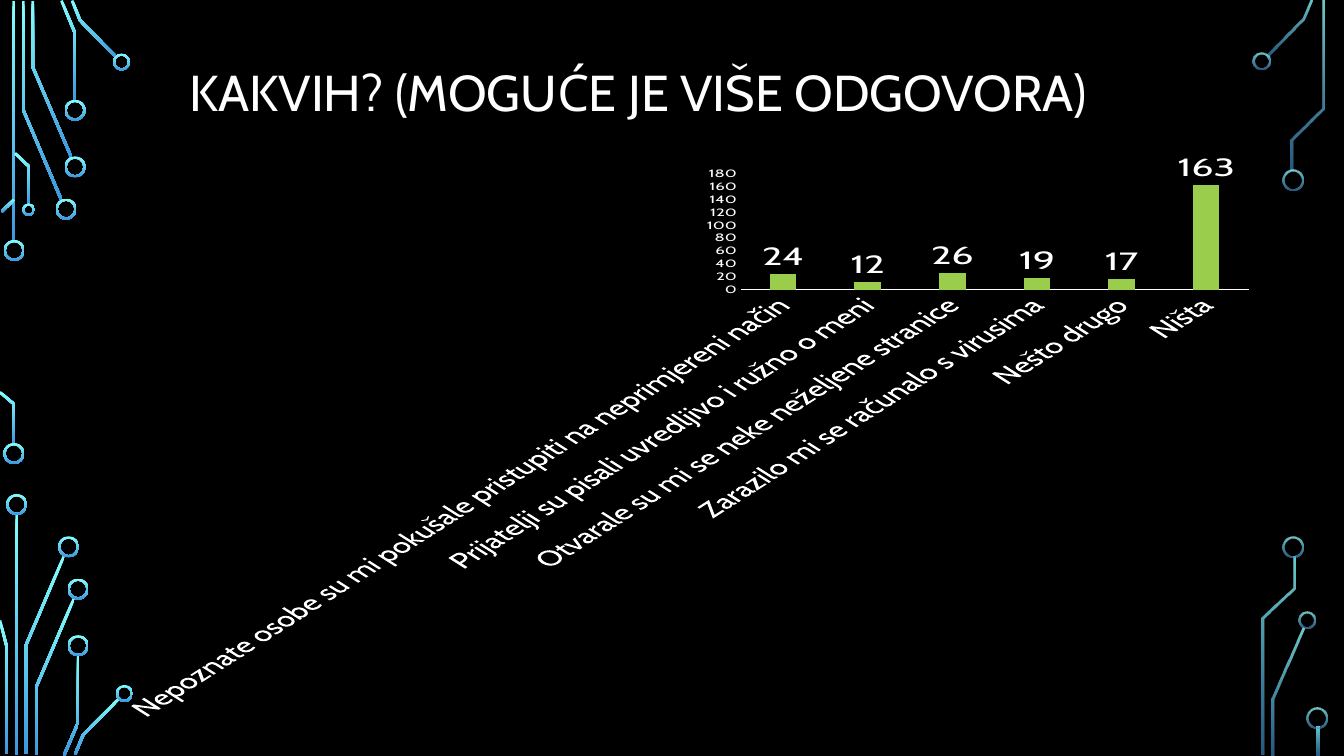
from math import hypot
from lxml.etree import SubElement
from pptx import Presentation
from pptx.chart.data import CategoryChartData as ChartData
from pptx.dml.color import RGBColor as RGB
from pptx.enum.chart import XL_CHART_TYPE as ChartType, XL_LABEL_POSITION as LabelPos, XL_TICK_MARK as Tick
from pptx.enum.shapes import MSO_SHAPE as Shape
from pptx.enum.text import MSO_ANCHOR as Anchor, PP_ALIGN as Align
from pptx.oxml.ns import qn
from pptx.util import Pt

TITLE = "KAKVIH? (MOGUĆE JE VIŠE ODGOVORA)"
ANSWERS = {
    "Nepoznate osobe su mi pokušale pristupiti na neprimjereni način": 24,
    "Prijatelji su pisali uvredljivo i ružno o meni": 12,
    "Otvarale su mi se neke neželjene stranice": 26,
    "Zarazilo mi se računalo s virusima": 19,
    "Nešto drugo": 17,
    "Ništa": 163,
}

THEME = {
    "font": "Cabin", "back": "000000", "text": "FFFFFF", "bar": "9ACD4C",
    "glow": ("82FFFF", "3D97DE"),
    "title": 36, "chart": 10, "values": 12, "categories": 24, "labels": 28,
}
TITLE_BOX = (128.2, 9.4, 779.8, 116.6)
CHART_BOX = (72, 108.7, 836.6, 406.8)
TRACE_WIDTH = 1.9
RING_WIDTH = 1.5
BIG, MEDIUM, SMALL = 15, 12.2, 9

# Circuit traces are centre lines; rings are (centre x, centre y, diameter).
LEFT_CIRCUIT = {
    "opacity": (100, 100),
    "traces": [
        [(9.7, 0.7), (9.7, 172.8)],
        [(16.6, 0.7), (16.6, 78.5), (43.9, 142.9)],
        [(23.4, 0.7), (23.4, 47.9), (51.1, 112.7)],
        [(43.9, 0.4), (53.6, 23.8), (53.6, 72)],
        [(51.5, 0.4), (57.2, 14.6), (83.2, 41)],
        [(10.1, 142.6), (1.1, 151.2)],
        [(0, 280.1), (10.1, 288.7), (10.1, 317.5)],
        [(10.8, 109.4), (20.9, 119.2), (20.9, 146.2)],
        [(11.9, 367.2), (11.9, 539.3)],
        [(45.7, 397.1), (18.4, 461.2), (18.4, 538.6)],
        [(0, 443.2), (4.7, 461.5), (4.7, 538.6)],
        [(52.9, 427.3), (25.6, 491.4), (25.6, 539.3)],
        [(55.8, 468), (55.8, 516.2), (45.7, 539.6)],
        [(85, 499), (59.4, 524.9), (53.6, 538.9)],
    ],
    "rings": [
        (10.1, 178.9, BIG), (9.9, 324, BIG), (47.2, 149.4, BIG),
        (53.6, 119.2, BIG), (53.6, 78.8, BIG), (86.8, 44.3, MEDIUM),
        (20.5, 149.8, SMALL), (11.9, 360.4, BIG), (49, 390.6, BIG),
        (55.8, 420.8, BIG), (55.8, 461.2, BIG), (88.9, 495.4, MEDIUM),
    ],
}
RIGHT_CIRCUIT = {
    "opacity": (80, 60),
    "traces": [
        [(936.4, 0.4), (930.6, 14), (905, 40)],
        [(945, 0.7), (945, 77.4), (923, 99.7), (923, 121.7)],
        [(931, 448.9), (909, 499.3), (909, 539.3)],
        [(924.1, 397.4), (924.1, 420.1), (901.8, 441.7), (901.8, 539.3)],
        [(941.4, 519.1), (941.4, 539.3)],
    ],
    "rings": [
        (901.1, 43.6, MEDIUM), (923.4, 128.5, BIG), (933.5, 443.2, MEDIUM),
        (923.8, 390.6, BIG), (940.7, 512.6, BIG),
    ],
}


def color(name):
    return RGB.from_string(THEME[name])


def format_font(font, size, tint="text"):
    font.name, font.size, font.bold = THEME["font"], Pt(THEME[size]), False
    font.color.rgb = color(tint)


def write(tf, text, size, align=Align.LEFT, anchor=Anchor.MIDDLE, spacing=0.9):
    tf.word_wrap, tf.vertical_anchor = True, anchor
    p = tf.paragraphs[0]
    p.alignment, p.line_spacing = align, spacing
    r = p.add_run()
    r.text = text
    format_font(r.font, size)


def place(sp, box):
    sp.left, sp.top, sp.width, sp.height = (Pt(v) for v in box)


def ribbon(line, width):
    """Outline of a centre line drawn at the given width, with mitred corners."""
    normals = []
    for (x1, y1), (x2, y2) in zip(line, line[1:]):
        length = hypot(x2 - x1, y2 - y1)
        normals.append(((y1 - y2) / length, (x2 - x1) / length))
    near, far = [], []
    for (x, y), (ax, ay), (bx, by) in zip(line, normals[:1] + normals, normals + normals[-1:]):
        reach = width / 2 / (1 + ax * bx + ay * by)
        dx, dy = (ax + bx) * reach, (ay + by) * reach
        near.append((x + dx, y + dy))
        far.append((x - dx, y - dy))
    return near + far[::-1]


def glow(sp, opacity):
    """Fill from light at the top to dark at the bottom."""
    sp.shadow.inherit = False
    sp.line.fill.background()
    sp.fill.gradient()
    sp.fill.gradient_angle = 270
    for stop, tint, position, percent in zip(sp.fill.gradient_stops, THEME["glow"], (0, 1), opacity):
        stop.color.rgb = RGB.from_string(tint)
        stop.position = position
        if percent < 100:
            clr = stop.color._xFill.find(qn("a:srgbClr")) if hasattr(stop.color, "_xFill") else None
            if clr is not None:
                SubElement(clr, qn("a:alpha")).set("val", str(percent * 1000))


def draw_circuit(shapes, circuit):
    for trace in circuit["traces"]:
        start, *rest = [(Pt(x), Pt(y)) for x, y in ribbon(trace, TRACE_WIDTH)]
        builder = shapes.build_freeform(*start)
        builder.add_line_segments(rest, close=True)
        glow(builder.convert_to_shape(), circuit["opacity"])
    for x, y, size in circuit["rings"]:
        sp = shapes.add_shape(Shape.DONUT, *(Pt(v) for v in (x - size / 2, y - size / 2, size, size)))
        sp.adjustments[0] = RING_WIDTH / size
        glow(sp, circuit["opacity"])


def draw_chart(shapes):
    data = ChartData()
    data.categories = list(ANSWERS)
    data.add_series("Series 1", list(ANSWERS.values()))
    chart = shapes.add_chart(ChartType.COLUMN_CLUSTERED, *(Pt(v) for v in CHART_BOX), data).chart
    chart.has_legend = chart.has_title = False
    format_font(chart.font, "chart")

    cats, vals = chart.category_axis, chart.value_axis
    for axis, size in ((cats, "categories"), (vals, "values")):
        axis.major_tick_mark = axis.minor_tick_mark = Tick.NONE
        axis.has_major_gridlines = False
        format_font(axis.tick_labels.font, size)
        body = axis._element.find(qn("c:txPr")).find(qn("a:bodyPr"))
        body.set("rot", "-60000000")
        body.set("vert", "horz")
    cats.format.line.color.rgb = color("text")
    cats.format.line.width = Pt(0.75)
    vals.format.line.fill.background()
    vals.minimum_scale, vals.maximum_scale, vals.major_unit = 0, 180, 20

    plot = chart.plots[0]
    plot.gap_width, plot.overlap, plot.vary_by_categories = 219, -27, False
    bars = plot.series[0]
    bars.format.fill.solid()
    bars.format.fill.fore_color.rgb = color("bar")
    labels = bars.data_labels
    labels.show_value, labels.position = True, LabelPos.OUTSIDE_END
    format_font(labels.font, "labels")


def main():
    prs = Presentation()
    prs.slide_width, prs.slide_height = Pt(960), Pt(540)
    s = prs.slides.add_slide(prs.slide_layouts[5])
    s.background.fill.solid()
    s.background.fill.fore_color.rgb = color("back")
    for circuit in (LEFT_CIRCUIT, RIGHT_CIRCUIT):
        draw_circuit(s.shapes, circuit)
    place(s.shapes.title, TITLE_BOX)
    write(s.shapes.title.text_frame, TITLE, "title")
    draw_chart(s.shapes)
    prs.save("out.pptx")


if __name__ == "__main__":
    main()
